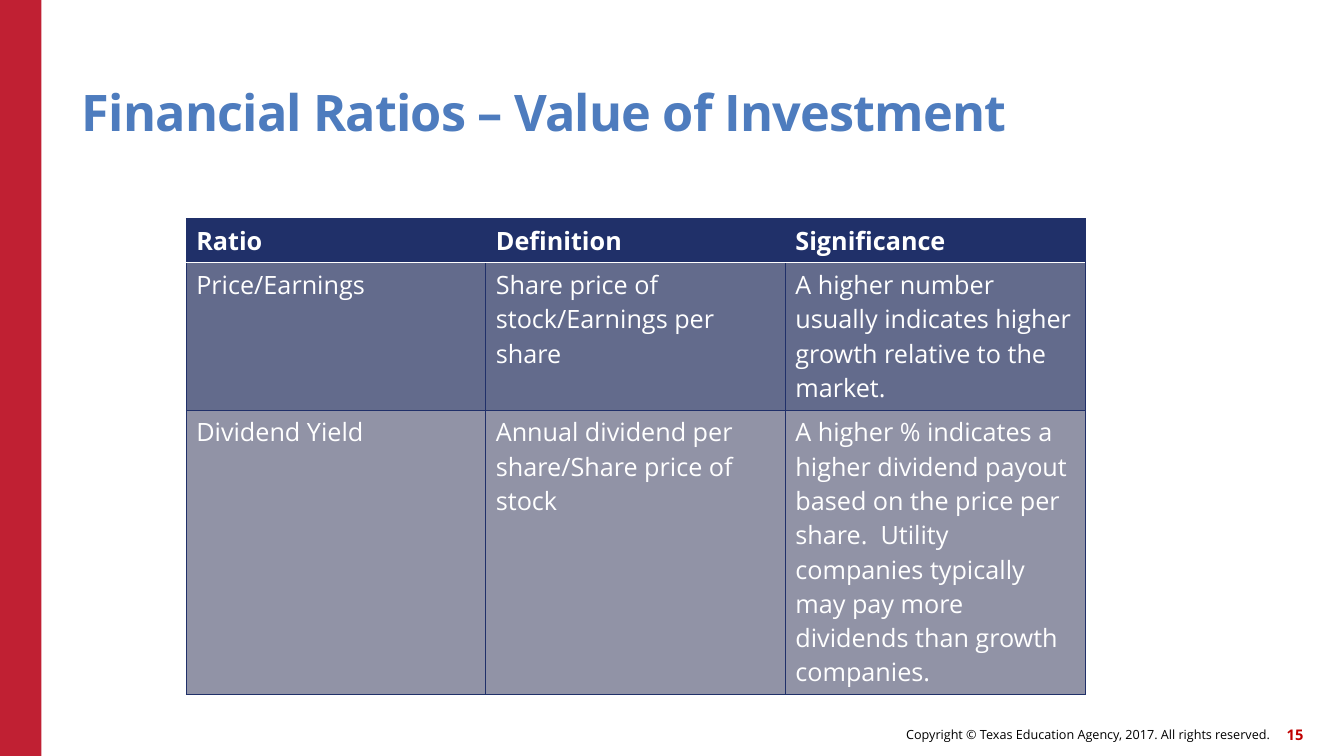
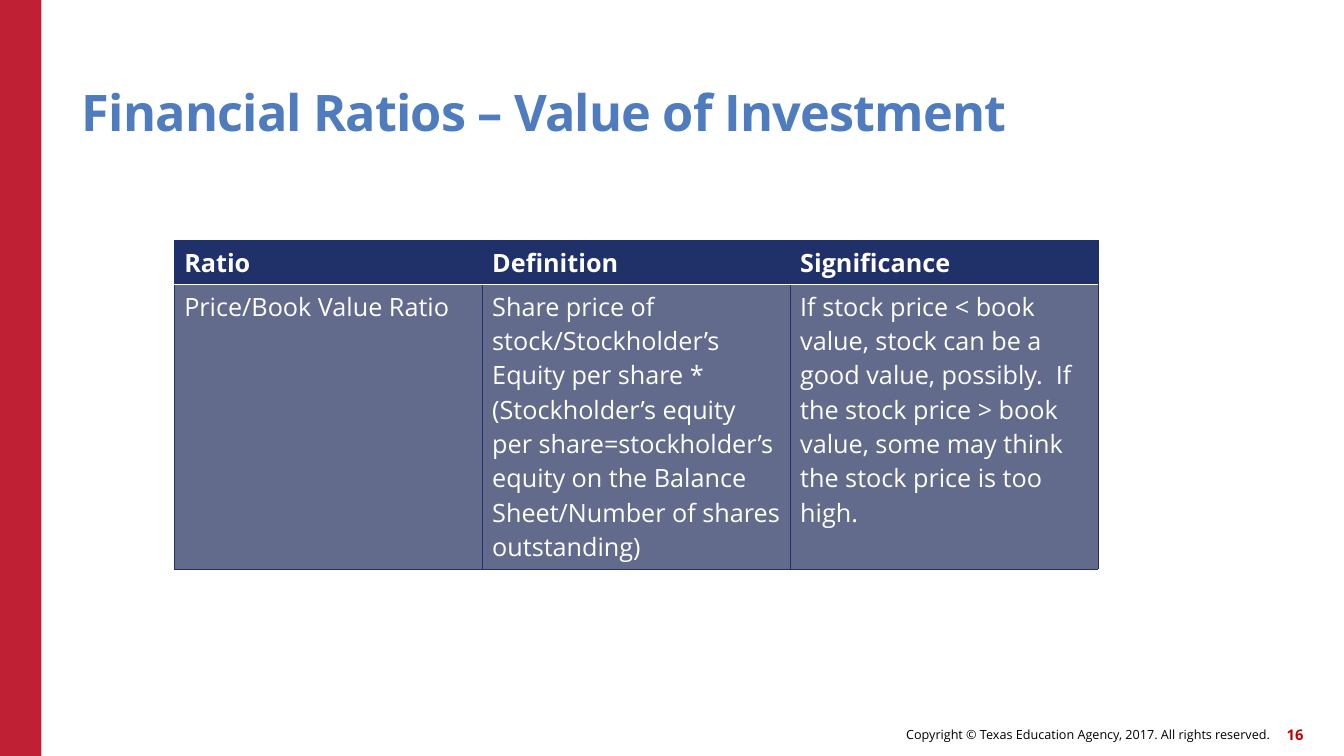
from pptx import Presentation
from pptx.dml.color import RGBColor
from pptx.enum.shapes import MSO_SHAPE
from pptx.enum.text import MSO_ANCHOR as Anchor, PP_ALIGN as Align
from pptx.oxml.ns import qn
from pptx.util import Pt
from lxml.etree import SubElement

COLORS = {
    "band": "C02033",
    "title": "4E7CBE",
    "navy": "203069",
    "row_dark": "636B8C",
    "row_light": "9193A6",
    "white": "FFFFFF",
    "black": "000000",
    "page_number": "C00000",
}
FONT = "Open Sans"
WIDTH, HEIGHT = 960, 540
LINE_HEIGHT, CELL_PADDING = 24.5, 7.2
TITLE = "Financial Ratios – Value of Investment"
COPYRIGHT = "Copyright © Texas Education Agency, 2017. All rights reserved."
HEADER = ("Ratio", "Definition", "Significance")


def rgb(name):
    return RGBColor.from_string(COLORS[name])


def write(frame, text, size=18, color="white", bold=False, align=Align.LEFT,
          line_spacing=None, tracking=None):
    """Fill a text frame, one paragraph per line of text."""
    frame.word_wrap = True
    for i, line in enumerate(text.split("\n")):
        paragraph = frame.paragraphs[0] if i == 0 else frame.add_paragraph()
        paragraph.alignment = align
        if line_spacing:
            paragraph.line_spacing = line_spacing
        run = paragraph.add_run()
        run.text = line
        font = run.font
        font.name, font.size, font.bold = FONT, Pt(size), bold
        font.color.rgb = rgb(color)
        if tracking:
            run._r.get_or_add_rPr().set("spc", str(round(tracking * 100)))


def add_label(slide, box, text, anchor=Anchor.MIDDLE, **style):
    frame = slide.shapes.add_textbox(*map(Pt, box)).text_frame
    frame.margin_left = frame.margin_right = 0
    frame.margin_top = frame.margin_bottom = 0
    frame.vertical_anchor = anchor
    write(frame, text, **style)


def add_band(slide, box):
    band = slide.shapes.add_shape(MSO_SHAPE.RECTANGLE, *map(Pt, box))
    band.shadow.inherit = False
    band.fill.solid()
    band.fill.fore_color.rgb = rgb("band")
    band.line.fill.background()


def add_footer(slide, box, number):
    left, top, width, height = box
    number_width, gap = 30, 24
    add_label(slide, (left, top, width - gap, height), COPYRIGHT,
              size=9, color="black", align=Align.RIGHT)
    add_label(slide, (left + width - number_width, top, number_width, height),
              str(number), size=10.5, color="page_number", bold=True,
              align=Align.RIGHT)


def add_border(cell, side, color, width):
    line = SubElement(cell._tc.get_or_add_tcPr(), qn(f"a:ln{side}"),
                      w=str(Pt(width)))
    fill = SubElement(line, qn("a:solidFill"))
    SubElement(fill, qn("a:srgbClr"), val=COLORS[color])


def add_ratio_table(slide, box, rows, line_counts):
    """Place a header and rows; line_counts gives the text lines in each row."""
    left, top, width = box
    heights = [count * LINE_HEIGHT + CELL_PADDING for count in (1, *line_counts)]
    table = slide.shapes.add_table(
        len(heights), len(HEADER), Pt(left), Pt(top), Pt(width),
        Pt(sum(heights))).table
    table.horz_banding = False
    for column in table.columns:
        column.width = Pt(width / len(HEADER))
    fills = ("navy", "row_dark", "row_light")
    for r, texts in enumerate((HEADER, *rows)):
        table.rows[r].height = Pt(heights[r])
        white_sides = {0: "B", 1: "T"}.get(r, "")
        for c, text in enumerate(texts):
            cell = table.cell(r, c)
            for side in "LRTB":
                edge = ("white", 1) if side in white_sides else ("navy", 0.5)
                add_border(cell, side, *edge)
            cell.fill.solid()
            cell.fill.fore_color.rgb = rgb(fills[r])
            write(cell.text_frame, text, bold=r == 0)


def add_ratio_slide(deck, number, table_box, rows, line_counts):
    slide = deck.slides.add_slide(deck.slide_layouts[6])
    add_band(slide, (0, 0, 29.5, HEIGHT))
    add_footer(slide, (442, 513, 489, 23), number)
    add_label(slide, (58.5, 32.5, 792, 69), TITLE, anchor=Anchor.BOTTOM, size=36,
              color="title", bold=True, line_spacing=0.9, tracking=-0.6)
    add_ratio_table(slide, table_box, rows, line_counts)


def main():
    deck = Presentation()
    deck.slide_width, deck.slide_height = Pt(WIDTH), Pt(HEIGHT)
    add_ratio_slide(deck, 15, (133, 156, 642), [
        ("Price/Earnings",
         "Share price of stock/Earnings per share",
         "A higher number usually indicates higher growth relative to the "
         "market."),
        ("Dividend Yield",
         "Annual dividend per share/Share price of stock",
         "A higher % indicates a higher dividend payout based on the price per "
         "share.  Utility companies typically may pay more dividends than "
         "growth companies."),
    ], line_counts=(4, 8))
    add_ratio_slide(deck, 16, (124.4, 171.5, 660), [
        ("Price/Book Value Ratio",
         "Share price of stock/Stockholder’s Equity per share *\n"
         "(Stockholder’s equity per share=stockholder’s equity on the Balance "
         "Sheet/Number of shares outstanding)",
         "If stock price < book value, stock can be a good value, possibly.  If "
         "the stock price > book value, some may think the stock price is too "
         "high."),
    ], line_counts=(8,))
    deck.save("out.pptx")


if __name__ == "__main__":
    main()
